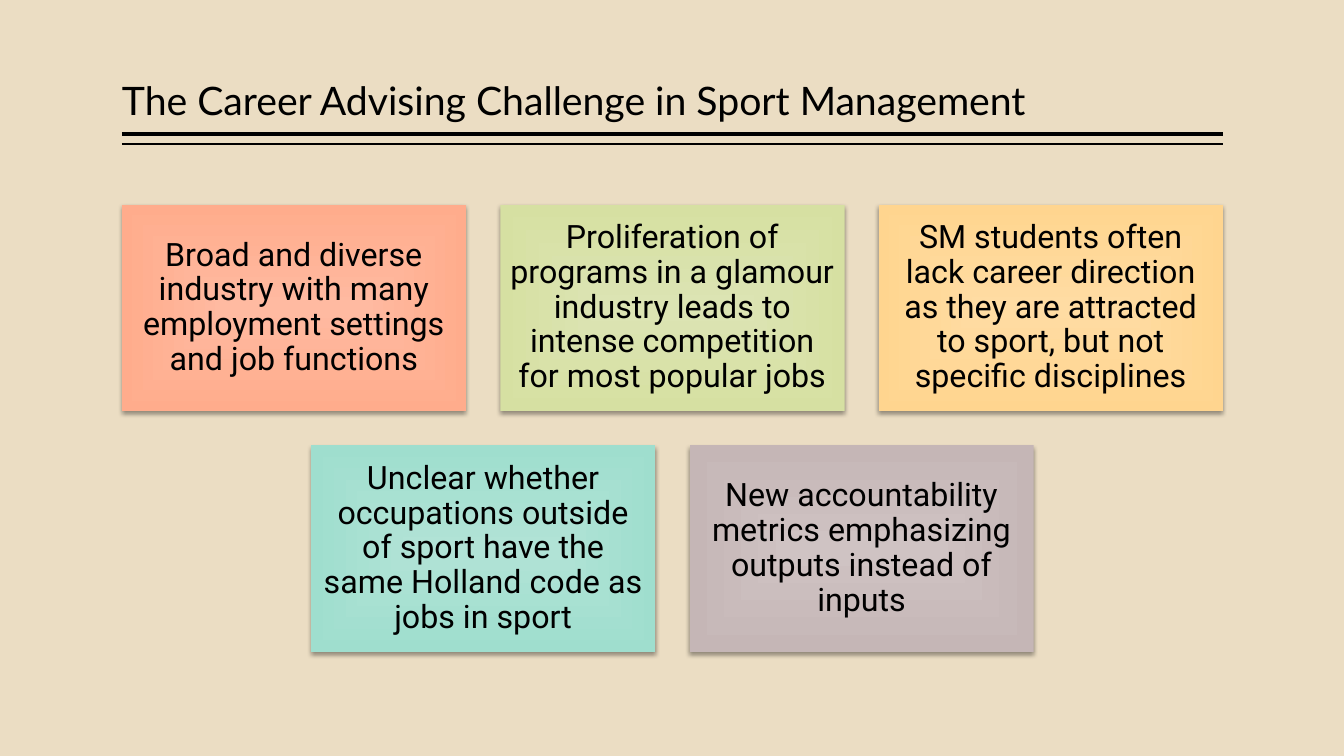
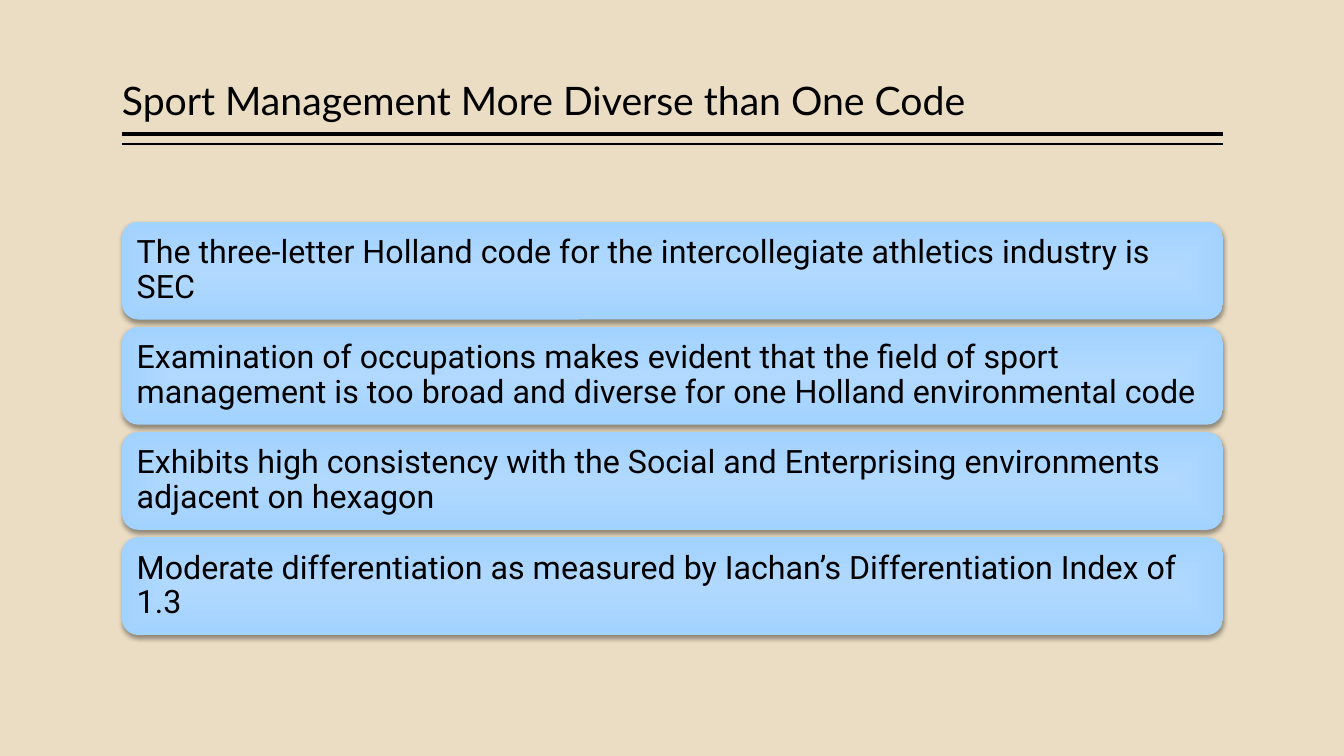
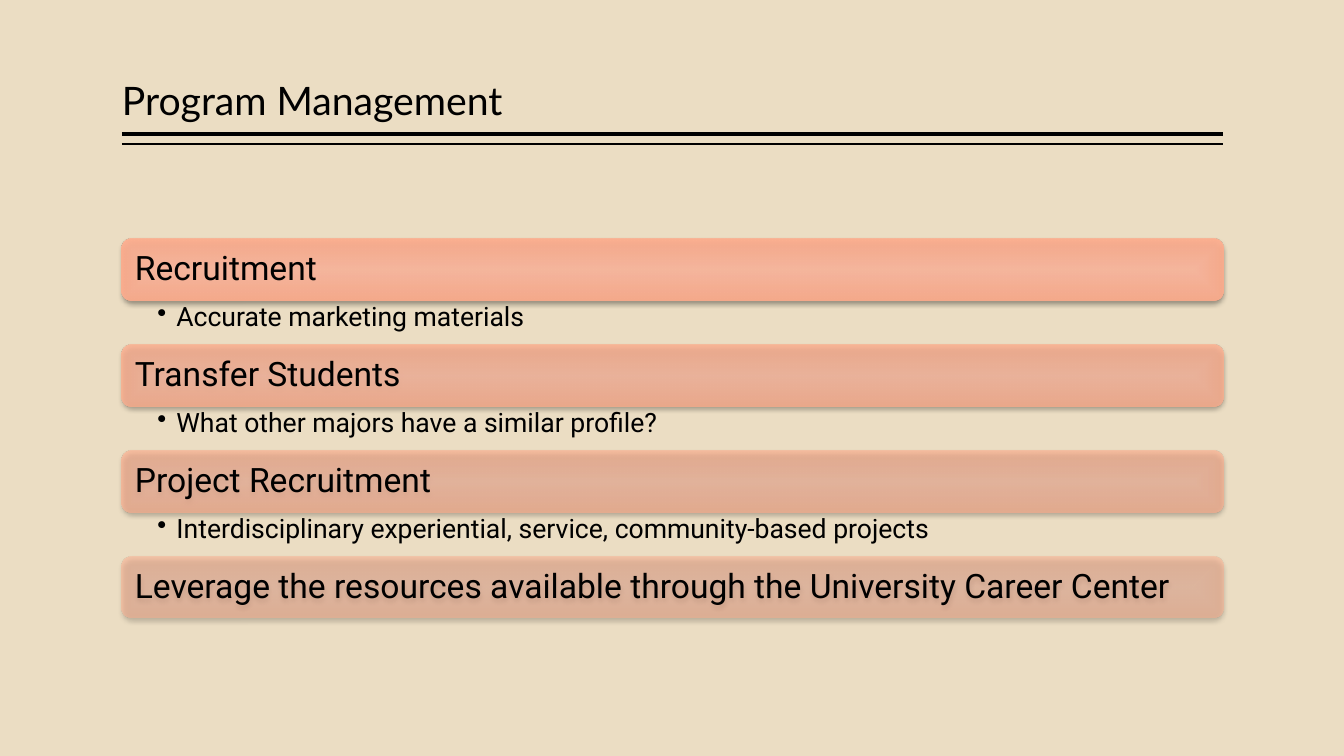
from dataclasses import dataclass

from lxml import etree
from pptx import Presentation
from pptx import util as u
from pptx.dml import color
from pptx.enum import shapes, text
from pptx.oxml import ns, parse_xml

SLIDE_WIDTH, SLIDE_HEIGHT = 13.33, 7.5
MARGIN = 1.21
CONTENT_WIDTH = 10.92
BACKGROUND, INK = "EBDDC3", "000000"
TITLE_FONT, BODY_FONT = "Lato", "Roboto"
TITLE_LAYOUT = 5


@dataclass(frozen=True)
class Box:
    left: float
    top: float
    width: float
    height: float

    def lengths(self) -> tuple:
        return tuple(u.Inches(n) for n in (self.left, self.top, self.width, self.height))


@dataclass(frozen=True)
class Glow:
    centre: str
    edge: str
    opacity: float = 100


@dataclass(frozen=True)
class Card:
    wording: str
    glow: Glow


@dataclass(frozen=True)
class Topic:
    heading: str
    detail: str = ""


CORAL = Glow("FFBAA1", "FFAC8C")
BLUE = Glow("B1D9FF", "A2D2FF")

CHALLENGES = [
    [
        Card("Broad and diverse industry with many employment settings and job functions", CORAL),
        Card("Proliferation of programs in a glamour industry leads to intense competition "
             "for most popular jobs", Glow("DCE4B3", "D6E0A2")),
        Card("SM students often lack career direction as they are attracted to sport, "
             "but not specific disciplines", Glow("FFDCA3", "FFD58F")),
    ],
    [
        Card("Unclear whether occupations outside of sport have the same Holland code "
             "as jobs in sport", Glow("B1E3D6", "9FDECE")),
        Card("New accountability metrics emphasizing outputs instead of inputs",
             Glow("CFC3C3", "C5B6B6")),
    ],
]

FINDINGS = [
    "The three-letter Holland code for the intercollegiate athletics industry is SEC",
    "Examination of occupations makes evident that the field of sport management is too broad "
    "and diverse for one Holland environmental code",
    "Exhibits high consistency with the Social and Enterprising environments adjacent on hexagon",
    "Moderate differentiation as measured by Iachan’s Differentiation Index of 1.3",
]

TOPICS = [
    Topic("Recruitment", "Accurate marketing materials"),
    Topic("Transfer Students", "What other majors have a similar profile?"),
    Topic("Project Recruitment", "Interdisciplinary experiential, service, community-based projects"),
    Topic("Leverage the resources available through the University Career Center"),
]


def rgb(value: str) -> color.RGBColor:
    return color.RGBColor.from_string(value)


def write(frame, wording: str, size: float, font: str = BODY_FONT,
          align=text.PP_ALIGN.LEFT, anchor=text.MSO_ANCHOR.MIDDLE,
          insets: tuple = (0.1, 0.1, 0.1, 0.1)):
    frame.text = wording
    frame.word_wrap = True
    frame.auto_size = text.MSO_AUTO_SIZE.NONE
    frame.vertical_anchor = anchor
    (frame.margin_left, frame.margin_top,
     frame.margin_right, frame.margin_bottom) = (u.Inches(n) for n in insets)
    paragraph = frame.paragraphs[0]
    paragraph.alignment = align
    paragraph.line_spacing = 0.9
    paragraph.space_before = u.Pt(0)
    paragraph.font.name = font
    paragraph.font.size = u.Pt(size)
    paragraph.font.color.rgb = rgb(INK)
    return paragraph


def apply_glow(shape, glow: Glow) -> None:
    stops = "".join(
        f'<a:gs pos="{position}"><a:srgbClr val="{value}">'
        f'<a:alpha val="{round(glow.opacity * 1000)}"/></a:srgbClr></a:gs>'
        for position, value in ((0, glow.centre), (100000, glow.edge)))
    gradient = parse_xml(
        f'<a:gradFill {ns.nsdecls("a")} rotWithShape="1"><a:gsLst>{stops}</a:gsLst>'
        '<a:path path="rect"><a:fillToRect l="50000" t="50000" r="50000" b="50000"/></a:path>'
        '</a:gradFill>')
    shape.fill.background()
    properties = shape.element.spPr
    properties.replace(properties.find(ns.qn("a:noFill")), gradient)


def apply_shadow(shape) -> None:
    shape.shadow.inherit = False
    shape.element.spPr.find(ns.qn("a:effectLst")).append(parse_xml(
        f'<a:outerShdw {ns.nsdecls("a")} blurRad="{u.Pt(3.5)}" dist="{u.Pt(2)}" dir="5400000" '
        f'algn="ctr" rotWithShape="0"><a:srgbClr val="{INK}"><a:alpha val="38000"/></a:srgbClr>'
        '</a:outerShdw>'))


def add_panel(slide, kind, box: Box, wording: str, size: float, glow: Glow,
              align=text.PP_ALIGN.LEFT) -> None:
    shape = slide.shapes.add_shape(kind, *box.lengths())
    shape.line.fill.background()
    apply_glow(shape, glow)
    apply_shadow(shape)
    write(shape.text_frame, wording, size, align=align)


def add_bullet(slide, box: Box, wording: str) -> None:
    frame = slide.shapes.add_textbox(*box.lengths()).text_frame
    paragraph = write(frame, wording, 19, anchor=text.MSO_ANCHOR.TOP,
                      insets=(0.35, 0.03, 0.19, 0.03))
    properties = paragraph._p.get_or_add_pPr()
    indent = u.Inches(0.19)
    properties.set("marL", str(indent))
    properties.set("indent", str(-indent))
    etree.SubElement(properties, ns.qn("a:buChar")).set("char", "•")
    properties.append(properties.find(ns.qn("a:defRPr")))


def add_rule(slide, top: float, weight: float) -> None:
    rule = slide.shapes.add_connector(
        shapes.MSO_CONNECTOR.STRAIGHT, u.Inches(MARGIN), u.Inches(top),
        u.Inches(MARGIN + CONTENT_WIDTH), u.Inches(top))
    rule.line.color.rgb = rgb(INK)
    rule.line.width = u.Pt(weight)
    etree.SubElement(rule.element.spPr, ns.qn("a:effectLst"))


def add_titled_slide(presentation, title: str):
    slide = presentation.slides.add_slide(presentation.slide_layouts[TITLE_LAYOUT])
    for top, weight in ((1.33, 3), (1.43, 1)):
        add_rule(slide, top, weight)
    write(slide.shapes.title.text_frame, title, 28, TITLE_FONT,
          anchor=text.MSO_ANCHOR.BOTTOM, insets=(0, 0.05, 0, 0.05))
    return slide


def add_challenges(presentation) -> None:
    slide = add_titled_slide(presentation, "The Career Advising Challenge in Sport Management")
    gap, top = 0.34, 2.03
    columns = len(CHALLENGES[0])
    width = (CONTENT_WIDTH - gap * (columns - 1)) / columns
    height = width * 0.6
    for row, cards in enumerate(CHALLENGES):
        indent = (columns - len(cards)) * (width + gap) / 2
        for column, card in enumerate(cards):
            box = Box(MARGIN + indent + column * (width + gap),
                      top + row * (height + gap), width, height)
            add_panel(slide, shapes.MSO_SHAPE.RECTANGLE, box, card.wording, 23, card.glow,
                      text.PP_ALIGN.CENTER)


def add_findings(presentation) -> None:
    slide = add_titled_slide(presentation, "Sport Management More Diverse than One Code")
    top, span, height = 2.2, 4.1, 0.97
    pitch = (span - height) / (len(FINDINGS) - 1)
    for row, finding in enumerate(FINDINGS):
        box = Box(MARGIN, top + row * pitch, CONTENT_WIDTH, height)
        add_panel(slide, shapes.MSO_SHAPE.ROUNDED_RECTANGLE, box, finding, 23, BLUE)


def add_topics(presentation) -> None:
    slide = add_titled_slide(presentation, "Program Management")
    top, pitch, height = 2.37, 1.05, 0.61
    fade = (90 - 50) / (len(TOPICS) - 1)
    for row, topic in enumerate(TOPICS):
        box = Box(MARGIN, top + row * pitch, CONTENT_WIDTH, height)
        glow = Glow(CORAL.centre, CORAL.edge, 90 - row * fade)
        add_panel(slide, shapes.MSO_SHAPE.ROUNDED_RECTANGLE, box, topic.heading, 24, glow)
        if topic.detail:
            add_bullet(slide, Box(MARGIN, box.top + height, CONTENT_WIDTH, pitch - height),
                       topic.detail)


def main() -> None:
    presentation = Presentation()
    presentation.slide_width = u.Inches(SLIDE_WIDTH)
    presentation.slide_height = u.Inches(SLIDE_HEIGHT)
    background = presentation.slide_master.background.fill
    background.solid()
    background.fore_color.rgb = rgb(BACKGROUND)
    title = presentation.slide_layouts[TITLE_LAYOUT].placeholders[0]
    title.left, title.top, title.width, title.height = Box(
        MARGIN, 0.08, CONTENT_WIDTH, 1.2).lengths()
    add_challenges(presentation)
    add_findings(presentation)
    add_topics(presentation)
    presentation.save("out.pptx")


if __name__ == "__main__":
    main()
